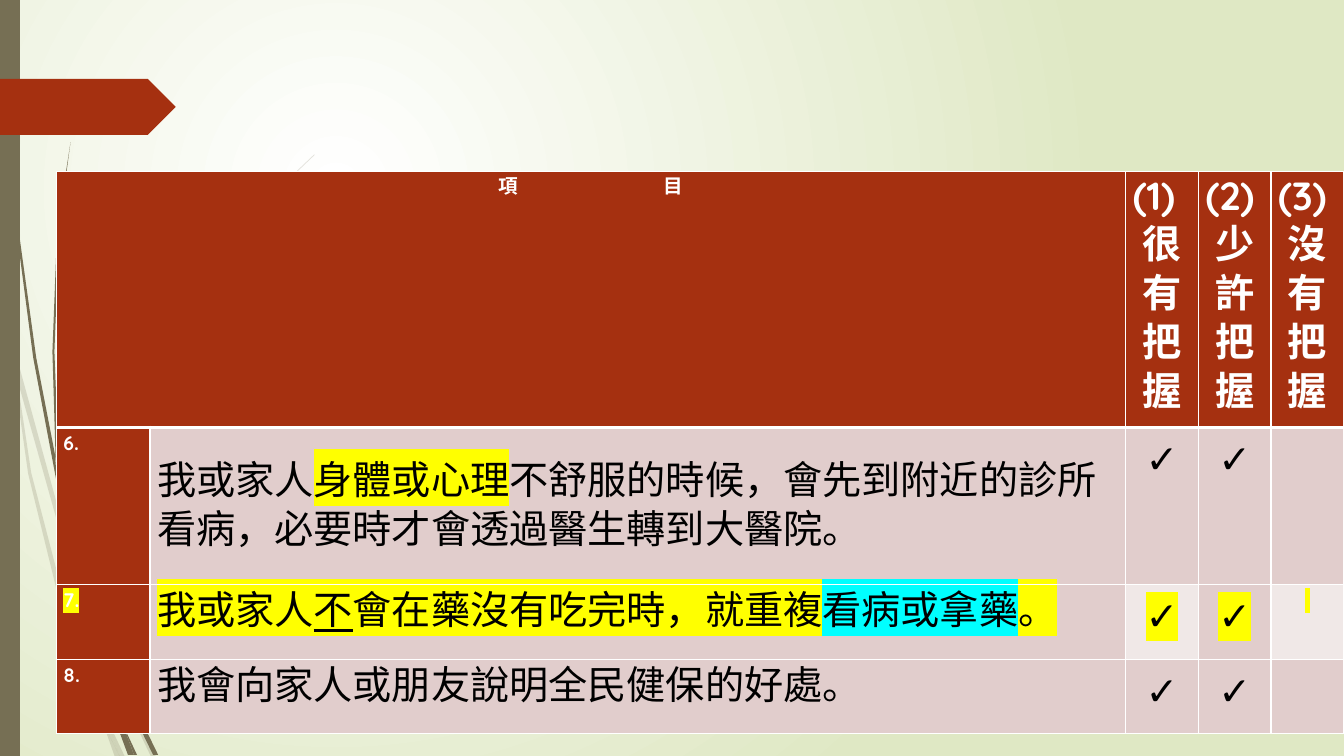
from lxml.etree import SubElement
from pptx import Presentation
from pptx.dml.color import RGBColor
from pptx.enum.shapes import MSO_SHAPE as SHAPE
from pptx.enum.text import MSO_ANCHOR as ANCHOR, PP_ALIGN as ALIGN
from pptx.oxml.ns import qn
from pptx.oxml.xmlchemy import OxmlElement
from pptx.util import Cm, Pt

COLORS = {
    "white": "FFFFFF", "black": "000000", "mist": "DFE8C4", "olive": "766F54",
    "rust": "A53010", "rose": "E1CDCC", "pale": "F0E8E7",
    "yellow": "FFFF00", "cyan": "00FFFF",
}
FONT = "Quicksand"
GRID = Cm(2.54) / 100
COL_WIDTHS = [2.36, 24.59, 1.83, 1.83, 1.83]
ROW_HEIGHTS = [6.45, 3.96, 1.88, 1.88]
RATINGS = ["很有把握", "少許把握", "沒有把握"]
QUESTIONS = [
    ("6.", None, [("我或家人", None, False), ("身體或心理", "yellow", False),
                  ("不舒服的時候，會先到附近的診所看病，必要時才會透過醫生轉到大醫院。", None, False)]),
    ("7.", "yellow", [("我或家人", "yellow", False), ("不", "yellow", True),
                      ("會在藥沒有吃完時，就重複", "yellow", False),
                      ("看病或拿藥", "cyan", False), ("。", "yellow", False)]),
    ("8.", None, [("我會向家人或朋友說明全民健保的好處。", None, False)]),
]
FAINT_STEMS = [
    [(11, 350), (9, 322), (0, 282), (0, 299), (10, 344)],
    [(58, 522), (84, 599), (85, 586), (62, 520), (14, 345), (17, 376)],
    [(92, 607), (88, 596), (88, 610), (123, 694), (150, 751), (155, 751), (127, 692)],
    [(119, 751), (124, 751), (105, 711)],
    [(93, 683), (70, 619), (31, 469), (17, 376), (11, 350), (28, 470), (65, 621),
     (92, 693), (101, 714), (99, 707)],
    [(84, 599), (87, 646), (93, 683), (96, 692), (105, 711), (103, 706), (91, 646),
     (88, 610), (88, 608)],
    [(88, 584), (110, 462), (160, 349), (229, 245), (268, 198), (290, 175), (312, 154),
     (312, 153), (289, 175), (268, 197), (228, 244), (158, 348), (107, 461), (85, 584),
     (85, 586), (88, 596)],
    [(101, 714), (114, 751), (119, 751)],
    [(88, 608), (88, 610), (88, 596), (85, 586), (84, 599)],
    [(96, 692), (93, 683), (99, 707), (101, 714), (119, 751), (105, 711)],
]
DARK_STEMS = [
    [(7, 110), (17, 233), (33, 355), (56, 477), (57, 481), (55, 457), (55, 453),
     (36, 355), (19, 232), (8, 109), (5, 48), (4, 0), (3, 0), (4, 48)],
    [(88, 592), (106, 645), (106, 633), (106, 631), (93, 590), (60, 472), (64, 505)],
    [(113, 649), (110, 641), (111, 656), (132, 708), (152, 749), (157, 749), (136, 706)],
    [(110, 691), (98, 657), (72, 556), (64, 505), (57, 477), (68, 557), (93, 659),
     (111, 708), (117, 722), (116, 717)],
    [(60, 472), (58, 453), (54, 349), (58, 245), (63, 193), (70, 141), (62, 193),
     (56, 245), (52, 349), (55, 449)],
    [(133, 749), (136, 749), (122, 719)],
    [(57, 477), (64, 505), (60, 472), (55, 449), (55, 453)],
    [(111, 633), (125, 552), (158, 476), (205, 406), (231, 374), (245, 359), (261, 344),
     (260, 344), (245, 358), (231, 373), (204, 405), (156, 474), (122, 551), (106, 631),
     (110, 641)],
    [(117, 722), (127, 749), (131, 749)],
    [(106, 645), (110, 691), (116, 706), (122, 719), (121, 716), (111, 656), (109, 651)],
    [(106, 645), (109, 651), (111, 656), (110, 641), (106, 631), (106, 633)],
    [(116, 706), (110, 691), (116, 717), (117, 722), (130, 749), (133, 749), (122, 719)],
]


def rgb(name):
    return RGBColor.from_string(COLORS[name])


def paint(sp, color):
    sp.shadow.inherit = False
    sp.fill.solid()
    sp.fill.fore_color.rgb = rgb(color)
    sp.line.fill.background()


def set_background(slide):
    fill = slide.background.fill
    fill.gradient()
    for stop, color in zip(fill.gradient_stops, ("white", "mist")):
        stop.color.rgb = rgb(color)
    lin = slide.element.find(".//" + qn("a:lin"))
    radial = OxmlElement("a:path")
    radial.set("path", "circle")
    rect = SubElement(radial, qn("a:fillToRect"))
    for side, value in zip("ltrb", (50000, 50000, 100000, 100000)):
        rect.set(side, str(value))
    lin.getparent().replace(lin, radial)


def add_stems(slide, stems, alpha=None):
    group = slide.shapes.add_group_shape()
    for start, *rest in stems:
        builder = group.shapes.build_freeform(*start, scale=GRID)
        builder.add_line_segments(rest, close=True)
        sp = builder.convert_to_shape()
        paint(sp, "olive")
        if alpha:
            color = sp.element.spPr.find(".//" + qn("a:srgbClr"))
            SubElement(color, qn("a:alpha")).set("val", str(alpha * 1000))


def add_block(slide, kind, left, top, width, height, color):
    paint(slide.shapes.add_shape(kind, Cm(left), Cm(top), Cm(width), Cm(height)), color)


def set_borders(cell, top=1, bottom=1):
    tcPr = cell._tc.get_or_add_tcPr()
    for i, (side, width) in enumerate(zip("LRTB", (1, 1, top, bottom))):
        ln = OxmlElement("a:ln" + side)
        ln.set("w", str(Pt(width)))
        fill = SubElement(ln, qn("a:solidFill"))
        SubElement(fill, qn("a:srgbClr")).set("val", COLORS["white"])
        tcPr.insert(i, ln)


def format_cell(cell, color, anchor=ANCHOR.TOP, top=0):
    cell.fill.solid()
    cell.fill.fore_color.rgb = rgb(color)
    cell.margin_left = cell.margin_right = Cm(0.18)
    cell.margin_top, cell.margin_bottom = Cm(top), 0
    cell.vertical_anchor = anchor


def format_paragraph(p, align, spacing, margin=0, indent=0):
    p.alignment = align
    p.line_spacing = Pt(spacing)
    pPr = p._p.get_or_add_pPr()
    pPr.set("marL", str(Cm(margin)))
    pPr.set("indent", str(Cm(indent)))


def add_run(p, text, size, color, bold=False, highlight=None, underline=False):
    r = p.add_run()
    r.text = text
    r.font.size, r.font.bold = Pt(size), bold
    r.font.color.rgb = rgb(color)
    if underline:
        r.font.underline = True
    if highlight:
        mark = SubElement(r.font._element, qn("a:highlight"))
        SubElement(mark, qn("a:srgbClr")).set("val", COLORS[highlight])
    r.font.name = FONT
    return r


def fill_header(table):
    title = table.cell(0, 0)
    title.merge(table.cell(0, 1))
    format_cell(title, "rust")
    p = title.text_frame.paragraphs[0]
    format_paragraph(p, ALIGN.CENTER, 20)
    add_run(p, "項", 14, "white", True).font._element.set("spc", "10400")
    add_run(p, "目", 14, "white", True)
    for number, rating in enumerate(RATINGS, 1):
        cell = table.cell(0, number + 1)
        format_cell(cell, "rust")
        tf = cell.text_frame
        p = tf.paragraphs[0]
        format_paragraph(p, ALIGN.LEFT, 35, 0.13, -0.23)
        add_run(p, f"({number})", 28, "white", True)
        for char in rating:
            p = tf.add_paragraph()
            format_paragraph(p, ALIGN.CENTER, 35, 0.05, -0.38)
            add_run(p, char, 28, "white", True)


def fill_question(table, row, number, highlight, parts):
    cells = [table.cell(row, col) for col in range(len(COL_WIDTHS))]
    format_cell(cells[0], "rust")
    p = cells[0].text_frame.paragraphs[0]
    format_paragraph(p, ALIGN.JUSTIFY, 20)
    add_run(p, number, 14, "white", True, highlight)

    format_cell(cells[1], "rose", ANCHOR.MIDDLE)
    p = cells[1].text_frame.paragraphs[0]
    format_paragraph(p, ALIGN.LEFT, 35 if row == 1 else 20)
    for text, mark, underline in parts:
        add_run(p, text, 28, "black", False, mark, underline)

    fills = ("pale", "rose", "pale") if highlight else ("rose",) * 3
    for cell, color, tick in zip(cells[2:], fills, ("✓", "✓", "")):
        format_cell(cell, color, top=0.71 if tick else 0)
        p = cell.text_frame.paragraphs[0]
        format_paragraph(p, ALIGN.CENTER, 20)
        if tick:
            add_run(p, tick, 28, "black", False, highlight)
        elif highlight:
            add_run(p, " ", 14, "black", False, highlight)


def add_survey_table(slide):
    frame = slide.shapes.add_table(len(ROW_HEIGHTS), len(COL_WIDTHS), Cm(1.42), Cm(4.32),
                                   Cm(sum(COL_WIDTHS)), Cm(sum(ROW_HEIGHTS)))
    table = frame.table
    table.first_row = table.horz_banding = False
    for column, width in zip(table.columns, COL_WIDTHS):
        column.width = Cm(width)
    for row, height in zip(table.rows, ROW_HEIGHTS):
        row.height = Cm(height)
    fill_header(table)
    for row, question in enumerate(QUESTIONS, 1):
        fill_question(table, row, *question)
    for i, row in enumerate(table.rows):
        for cell in row.cells:
            set_borders(cell, 3 if i == 1 else 1, 3 if i == 0 else 1)


def main():
    prs = Presentation()
    prs.slide_width, prs.slide_height = Cm(33.87), Cm(19.05)
    slide = prs.slides.add_slide(prs.slide_layouts[6])
    set_background(slide)
    add_stems(slide, FAINT_STEMS, alpha=20)
    add_stems(slide, DARK_STEMS)
    add_block(slide, SHAPE.RECTANGLE, 0, 0, 0.5, 19.05, "olive")
    add_block(slide, SHAPE.PENTAGON, 0, 1.99, 4.43, 1.41, "rust")
    add_survey_table(slide)
    prs.save("out.pptx")


if __name__ == "__main__":
    main()
